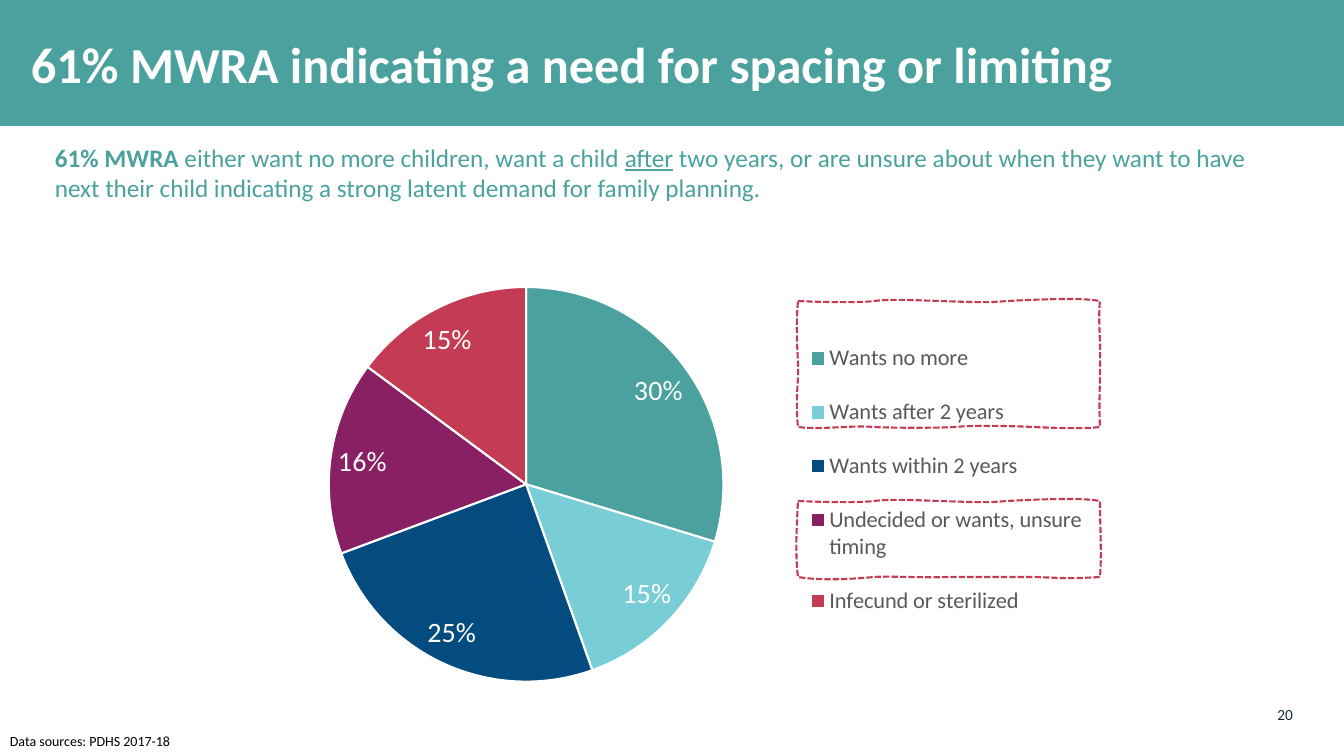
from pptx import Presentation
from pptx.chart.data import CategoryChartData
from pptx.dml.color import RGBColor
from pptx.enum.chart import XL_CHART_TYPE, XL_LABEL_POSITION, XL_LEGEND_POSITION
from pptx.enum.dml import MSO_LINE
from pptx.enum.shapes import MSO_SHAPE
from pptx.enum.text import MSO_ANCHOR, PP_ALIGN
from pptx.oxml import parse_xml
from pptx.oxml.ns import nsdecls
from pptx.util import Pt

EMU_PER_PX = 914400 / 100.8
FONT = "Calibri"
COLORS = {
    "teal": "4AA19E", "aqua": "78CDD7", "navy": "044B7F", "plum": "892064", "red": "C33C54",
    "white": "FFFFFF", "black": "000000", "ink": "112E38", "gray": "595959",
}


def color(name):
    return RGBColor.from_string(COLORS[name])


def add_text(spans, at, size, fill, align=PP_ALIGN.LEFT, anchor=MSO_ANCHOR.TOP,
             margins=True, wrap=True, line_spacing=None):
    """Add one paragraph of (text, bold, underline) spans; at is left, top, width, height in px."""
    box = page.shapes.add_textbox(*[round(n * EMU_PER_PX) for n in at])
    frame = box.text_frame
    frame.word_wrap = wrap
    frame.vertical_anchor = anchor
    if not margins:
        frame.margin_left = frame.margin_top = frame.margin_right = frame.margin_bottom = 0
    para = frame.paragraphs[0]
    para.alignment = align
    para.line_spacing = line_spacing
    for text, bold, underline in spans:
        span = para.add_run()
        span.text = text
        span.font.name = FONT
        span.font.size = Pt(size)
        span.font.bold = bold
        span.font.underline = underline
        span.font.color.rgb = color(fill)


deck = Presentation()
deck.slide_width = round(1344 * EMU_PER_PX)
deck.slide_height = round(756 * EMU_PER_PX)
page = deck.slides.add_slide(deck.slide_layouts[6])

# Title band and texts
band = page.shapes.add_shape(MSO_SHAPE.RECTANGLE, 0, 0, deck.slide_width, round(126 * EMU_PER_PX))
band.shadow.inherit = False
band.fill.solid()
band.fill.fore_color.rgb = color("teal")
band.line.fill.background()

add_text([("61% MWRA indicating a need for spacing or limiting", True, False)],
         (21, 8, 1323, 118), 36, "white", anchor=MSO_ANCHOR.MIDDLE, line_spacing=0.9)
add_text([("20", False, False)], (1244, 705, 49, 20), 11, "ink",
         align=PP_ALIGN.RIGHT, margins=False)
add_text([
    ("61% MWRA", True, False),
    (" either want no more children, want a child ", False, False),
    ("after", False, True),
    (" two years, or are unsure about when they want to have next their child "
     "indicating a strong latent demand for family planning.", False, False),
], (45, 137, 1255, 72), 18, "teal")
add_text([("Data sources: PDHS 2017-18", False, False)], (0, 728, 188, 27), 10, "black", wrap=False)

# Pie chart
slices = [
    ("Wants no more", 30, "teal"),
    ("Wants after 2 years", 15, "aqua"),
    ("Wants within 2 years", 25, "navy"),
    ("Undecided or wants, unsure timing", 16, "plum"),
    ("Infecund or sterilized", 15, "red"),
]
data = CategoryChartData()
data.categories = [name for name, value, fill in slices]
data.add_series("Series 1", [value for name, value, fill in slices])
chart_at = (243, 241, 858, 455)
chart = page.shapes.add_chart(
    XL_CHART_TYPE.PIE, *[round(n * EMU_PER_PX) for n in chart_at], data).chart
chart.has_title = False
chart.font.name = FONT
chart.font.size = Pt(12)
chart.font.color.rgb = color("black")

chart.has_legend = True
legend = chart.legend
legend.position = XL_LEGEND_POSITION.RIGHT
legend.include_in_layout = False
legend.font.name = FONT
legend.font.size = Pt(16)
legend.font.color.rgb = color("gray")

plot = chart.plots[0]
plot.vary_by_categories = True
for index, (name, value, fill) in enumerate(slices):
    wedge = plot.series[0].points[index].format
    wedge.fill.solid()
    wedge.fill.fore_color.rgb = color(fill)
    wedge.line.color.rgb = color("white")
    wedge.line.width = Pt(1.5)

plot.has_data_labels = True
labels = plot.data_labels
labels.show_percentage = True
labels.show_value = False
labels.number_format = "0%"
labels.number_format_is_linked = False
labels.position = XL_LABEL_POSITION.BEST_FIT
labels.font.name = FONT
labels.font.size = Pt(20)
labels.font.color.rgb = color("white")

# Fixed places of the pie and the legend, as shares of the chart
plot_area = chart._chartSpace.chart.plotArea
for parent, before, target, share in (
    (plot_area, 0, '<c:layoutTarget val="inner"/>', (0.1, 0.1, 0.46, 0.87)),
    (legend._element, 1, "", (0.65, 0.17, 0.34, 0.71)),
):
    for old in parent.findall("{*}layout"):
        parent.remove(old)
    modes = '<c:xMode val="edge"/><c:yMode val="edge"/>'
    sizes = "".join(f'<c:{key} val="{part}"/>' for key, part in zip("xywh", share))
    parent.insert(before, parse_xml(
        f'<c:layout {nsdecls("c")}><c:manualLayout>{target}{modes}{sizes}'
        "</c:manualLayout></c:layout>"))

# Hand-drawn frames round legend entries: curves of two handles and an end, from the top left
top_edge = [
    ((20, 1), (60, 2), (76, 0)), ((92, -2), (112, -1), (142, 0)),
    ((173, 1), (188, 2), (209, 0)), ((230, -1), (283, -4), (302, 0)),
]
tall_sides = [
    ((300, 21), (303, 37), (302, 66)), ((302, 94), (301, 99), (302, 126)),
    ((286, 128), (257, 127), (236, 126)), ((215, 125), (176, 124), (157, 126)),
    ((139, 127), (97, 127), (76, 126)), ((54, 124), (24, 129), (0, 126)),
    ((-3, 94), (1, 84), (0, 61)), ((-1, 39), (-2, 25), (0, 0)),
]
short_sides = [
    ((302, 24), (304, 53), (302, 76)), ((271, 78), (265, 77), (236, 76)),
    ((207, 76), (186, 76), (154, 76)), ((122, 77), (95, 75), (76, 76)),
    ((56, 78), (23, 80), (0, 76)), ((-3, 52), (-1, 22), (0, 0)),
]
for left, top, sides in ((798, 301, tall_sides), (798, 501, short_sides)):
    curves = top_edge + sides
    builder = page.shapes.build_freeform(0, 0, scale=EMU_PER_PX)
    builder.add_line_segments([end for first, second, end in curves], close=True)
    frame = builder.convert_to_shape(left, top)
    frame.left, frame.top = round(left * EMU_PER_PX), round(top * EMU_PER_PX)
    # Bend each straight segment into a Bezier curve
    for segment, curve in zip(list(frame._element.iter("{*}lnTo")), curves):
        points = "".join(f'<a:pt x="{x}" y="{y}"/>' for x, y in curve)
        segment.getparent().replace(segment, parse_xml(
            f'<a:cubicBezTo {nsdecls("a")}>{points}</a:cubicBezTo>'))
    frame.shadow.inherit = False
    frame.fill.background()
    frame.line.color.rgb = color("red")
    frame.line.width = Pt(1.5)
    frame.line.dash_style = MSO_LINE.SQUARE_DOT

deck.save("out.pptx")
